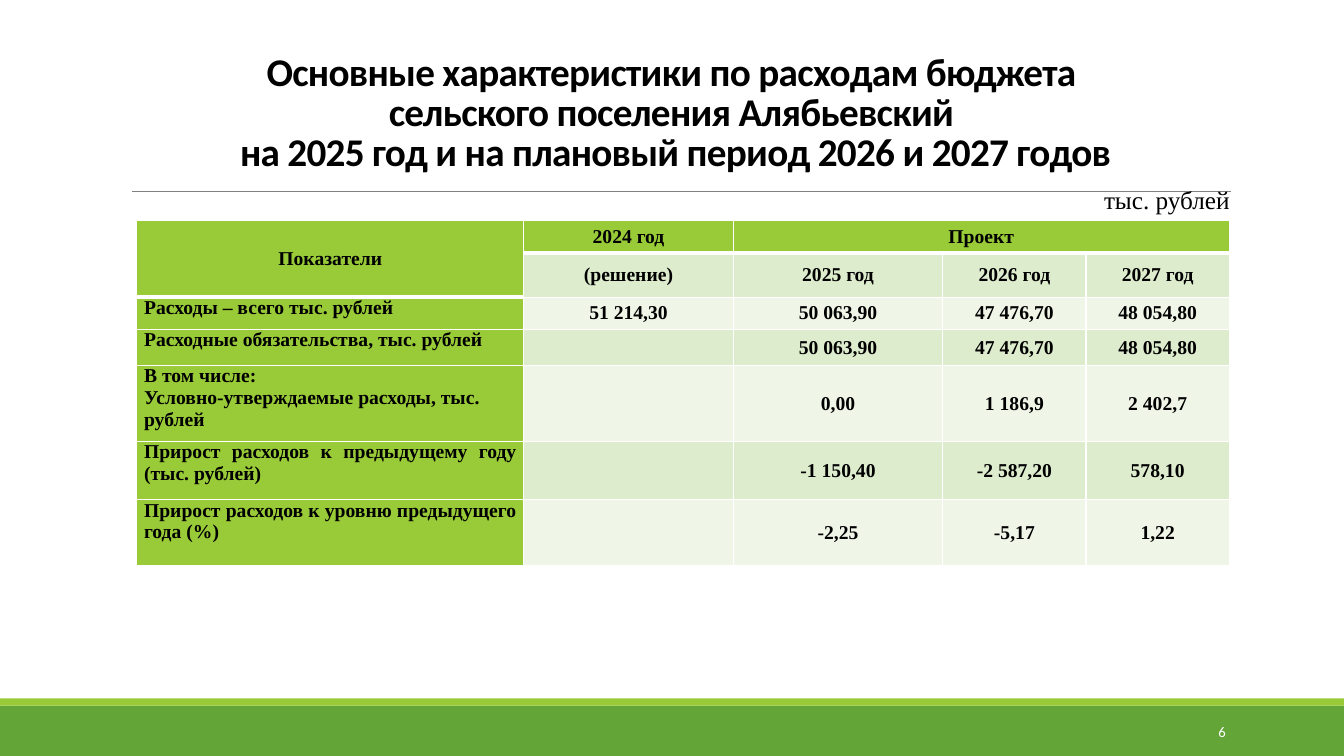
from lxml.etree import SubElement
from pptx import Presentation
from pptx.dml.color import RGBColor
from pptx.enum.shapes import MSO_CONNECTOR as Connector, MSO_SHAPE as Shape
from pptx.enum.text import MSO_ANCHOR as Anchor, PP_ALIGN as Align
from pptx.oxml.ns import qn
from pptx.util import Cm, Pt

WHITE = RGBColor(0xFF, 0xFF, 0xFF)
BLACK = RGBColor(0, 0, 0)
GREY = RGBColor(0x80, 0x80, 0x80)
GREEN = RGBColor(0x63, 0xA5, 0x37)
LIME = RGBColor(0x99, 0xCB, 0x38)
BANDS = RGBColor(0xEF, 0xF6, 0xE8), RGBColor(0xDE, 0xEC, 0xCE)
SANS, SERIF = "Calibri", "Times New Roman"

TITLE = [
    "Основные характеристики по расходам бюджета ",
    "сельского поселения Алябьевский ",
    "на 2025 год и на плановый период 2026 и 2027 годов",
]
COLUMN_WIDTHS = [9.75, 5.28, 5.28, 3.61, 3.61]
ROW_HEIGHTS = [0.81, 1.12, 0.81, 0.91, 1.91, 1.47, 1.65]
HEADER_ROWS = 2
BUDGET = [
    ["Показатели", "2024 год", "Проект", "", ""],
    ["", "(решение)", "2025 год", "2026 год", "2027 год"],
    ["Расходы – всего тыс. рублей", "51 214,30", "50 063,90", "47 476,70", "48 054,80"],
    ["Расходные обязательства, тыс. рублей", "", "50 063,90", "47 476,70", "48 054,80"],
    ["В том числе:\nУсловно-утверждаемые расходы, тыс. рублей", "", "0,00", "1 186,9", "2 402,7"],
    ["Прирост расходов к предыдущему году (тыс. рублей)", "", "-1 150,40", "-2 587,20", "578,10"],
    ["Прирост расходов к уровню предыдущего года (%)", "", "-2,25", "-5,17", "1,22"],
]
JUSTIFIED_ROWS = (5, 6)


def set_font(para, name, size, color, bold=False):
    font = para.font
    font.name, font.size, font.bold = name, Pt(size), bold
    font.color.rgb = color


def add_band(page, top, height, color):
    band = page.shapes.add_shape(Shape.RECTANGLE, 0, Cm(top), Cm(33.87), Cm(height))
    band.shadow.inherit = False
    band.fill.solid()
    band.fill.fore_color.rgb = color
    band.line.fill.background()


def add_rule(page, left, right, top):
    rule = page.shapes.add_connector(Connector.STRAIGHT, Cm(left), Cm(top), Cm(right), Cm(top))
    rule.line.color.rgb = GREY
    rule.line.width = Pt(0.5)
    SubElement(rule._element.spPr, qn("a:effectLst"))


def add_text(page, place, lines, align, anchor, name, size, color, bold=False):
    box = page.shapes.add_textbox(*map(Cm, place))
    frame = box.text_frame
    frame.word_wrap = True
    frame.vertical_anchor = anchor
    para = frame.paragraphs[0]
    para.alignment = align
    set_font(para, name, size, color, bold)
    for number, line in enumerate(lines):
        if number:
            para.add_line_break()
        para.add_run().text = line
    return para


def add_title(page):
    para = add_text(page, (3.05, 0.79, 27.94, 3.73), TITLE, Align.CENTER, Anchor.BOTTOM,
                    SANS, 28, BLACK, bold=True)
    para.line_spacing = 0.85
    for span in para.runs:
        span._r.get_or_add_rPr().set("spc", "-50")


def set_borders(cell, bottom):
    properties = cell._tc.get_or_add_tcPr()
    widths = {"lnL": 1, "lnR": 1, "lnT": 1, "lnB": bottom}
    for position, (side, width) in enumerate(widths.items()):
        line = SubElement(properties, qn(f"a:{side}"), w=str(Pt(width)))
        fill = SubElement(line, qn("a:solidFill"))
        SubElement(fill, qn("a:srgbClr"), val=str(WHITE))
        properties.insert(position, line)


def style_cell(cell, text, row, column):
    is_label = column == 0 and row >= HEADER_ROWS
    cell.text = text
    cell.margin_left = cell.margin_right = Cm(0.18)
    cell.margin_top = cell.margin_bottom = 0
    cell.vertical_anchor = Anchor.TOP if is_label else Anchor.MIDDLE
    cell.fill.solid()
    cell.fill.fore_color.rgb = LIME if row == 0 or column == 0 else BANDS[row % 2]
    align = Align.CENTER
    if is_label:
        align = Align.JUSTIFY if row in JUSTIFIED_ROWS else Align.LEFT
    for para in cell.text_frame.paragraphs:
        para.alignment = align
        set_font(para, SERIF, 14, BLACK, bold=True)
    under_header = row == 0 or (row == 1 and column == 0)
    set_borders(cell, bottom=3 if under_header else 1)


def add_budget_table(page):
    table = page.shapes.add_table(
        len(ROW_HEIGHTS), len(COLUMN_WIDTHS), Cm(3.45), Cm(5.56),
        Cm(sum(COLUMN_WIDTHS)), Cm(sum(ROW_HEIGHTS))).table
    for column, width in zip(table.columns, COLUMN_WIDTHS):
        column.width = Cm(width)
    for row, height in zip(table.rows, ROW_HEIGHTS):
        row.height = Cm(height)
    for row, texts in enumerate(BUDGET):
        for column, text in enumerate(texts):
            style_cell(table.cell(row, column), text, row, column)
    table.cell(0, 0).merge(table.cell(1, 0))
    table.cell(0, 2).merge(table.cell(0, 4))


def main():
    deck = Presentation()
    deck.slide_width, deck.slide_height = Cm(33.87), Cm(19.05)
    page = deck.slides.add_slide(deck.slide_layouts[6])

    # Footer bands and the rule under the title
    add_band(page, 17.78, 1.27, GREEN)
    add_band(page, 17.6, 0.18, LIME)
    add_rule(page, 3.33, 31.01, 4.83)

    # Title, table, page number and unit of measure
    add_title(page)
    add_budget_table(page)
    add_text(page, (27.51, 17.93, 3.63, 1.02), ["6"], Align.RIGHT, Anchor.MIDDLE, SANS, 10.5, WHITE)
    add_text(page, (27.08, 4.52, 4.16, 1.02), ["тыс. рублей"], Align.RIGHT, Anchor.TOP, SERIF, 18, BLACK)

    deck.save("out.pptx")


if __name__ == "__main__":
    main()
